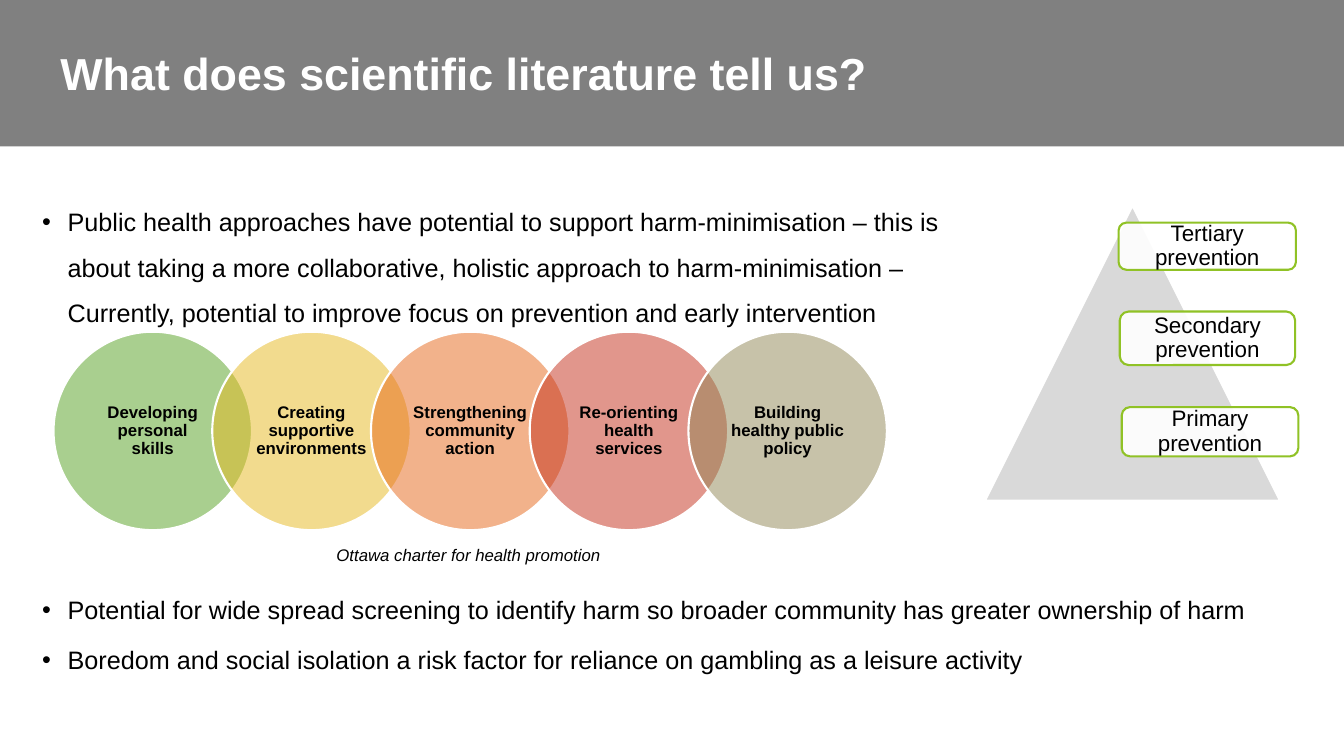
from copy import deepcopy
from dataclasses import dataclass

from lxml.etree import SubElement
from pptx import Presentation
from pptx.dml.color import RGBColor
from pptx.enum.shapes import MSO_SHAPE
from pptx.enum.text import MSO_ANCHOR, MSO_AUTO_SIZE, PP_ALIGN
from pptx.oxml.ns import qn
from pptx.shapes.autoshape import Shape
from pptx.text.text import TextFrame
from pptx.util import Cm, Pt

BLACK = RGBColor(0x00, 0x00, 0x00)
WHITE = RGBColor(0xFF, 0xFF, 0xFF)
BAND_GREY = RGBColor(0x80, 0x80, 0x80)
PYRAMID_GREY = RGBColor(0xD9, 0xD9, 0xD9)
GREEN = RGBColor(0x54, 0xA0, 0x21)
YELLOW = RGBColor(0xE6, 0xB9, 0x1E)
ORANGE = RGBColor(0xE7, 0x66, 0x18)
RED = RGBColor(0xC4, 0x2F, 0x1A)
KHAKI = RGBColor(0x91, 0x86, 0x55)
LIME = RGBColor(0x90, 0xC2, 0x26)

FONT = "Arial"
CIRCLE_LEFT, CIRCLE_TOP, CIRCLE_SIZE, CIRCLE_STEP = 1.35, 8.36, 5, 4


@dataclass(frozen=True)
class CharterAction:
    text: str
    color: RGBColor


@dataclass(frozen=True)
class PreventionLevel:
    text: str
    left: float
    top: float
    width: float
    height: float


@dataclass(frozen=True)
class Finding:
    text: str
    space_before: float


ACTIONS = [
    CharterAction("Developing personal\nskills", GREEN),
    CharterAction("Creating supportive environments", YELLOW),
    CharterAction("Strengthening community action", ORANGE),
    CharterAction("Re-orienting\nhealth services", RED),
    CharterAction("Building healthy public\npolicy", KHAKI),
]

LEVELS = [
    PreventionLevel("Tertiary prevention", 28.19, 5.61, 4.47, 1.19),
    PreventionLevel("Secondary prevention", 28.22, 7.85, 4.42, 1.35),
    PreventionLevel("Primary prevention", 28.27, 10.26, 4.45, 1.24),
]

# The second finding starts below the row of circles.
FINDINGS = [
    Finding(
        "Public health approaches have potential to support harm-minimisation – this is\n"
        "about taking a more collaborative, holistic approach to harm-minimisation –\n"
        "Currently, potential to improve focus on prevention and early intervention",
        3,
    ),
    Finding(
        "Potential for wide spread screening to identify harm so broader community "
        "has greater ownership of harm",
        180,
    ),
    Finding(
        "Boredom and social isolation a risk factor for reliance on gambling "
        "as a leisure activity",
        3,
    ),
]


def write(frame: TextFrame, *texts: str, size: float, color: RGBColor = BLACK,
          bold: bool = False, italic: bool = False,
          align: PP_ALIGN = PP_ALIGN.LEFT, line_spacing: float = 1.0) -> None:
    """Write one formatted paragraph per text; a newline is a line break."""
    for index, text in enumerate(texts):
        paragraph = frame.add_paragraph() if index else frame.paragraphs[0]
        paragraph.text = text
        paragraph.alignment = align
        paragraph.line_spacing = line_spacing
        for run in paragraph.runs:
            run.font.name, run.font.size = FONT, Pt(size)
            run.font.bold, run.font.italic = bold, italic
            run.font.color.rgb = color
        for line_break in paragraph._p.findall(qn("a:br")):
            line_break.append(deepcopy(paragraph.runs[0]._r.rPr))


def place(shape: Shape, left: float, top: float, width: float, height: float) -> None:
    shape.left, shape.top = Cm(left), Cm(top)
    shape.width, shape.height = Cm(width), Cm(height)


def add_figure(shapes, preset: MSO_SHAPE, left: float, top: float, width: float,
               height: float, *, fill: RGBColor, line: RGBColor | None = None,
               opacity: int = 100) -> Shape:
    figure = shapes.add_shape(preset, Cm(left), Cm(top), Cm(width), Cm(height))
    figure.shadow.inherit = False
    figure.fill.solid()
    figure.fill.fore_color.rgb = fill
    if opacity < 100:
        fill_color = figure._element.spPr.find(qn("a:solidFill"))[0]
        SubElement(fill_color, qn("a:alpha"), val=str(opacity * 1000))
    if line is None:
        figure.line.fill.background()
    else:
        figure.line.color.rgb = line
        figure.line.width = Pt(1.5)
    return figure


def label(figure: Shape, text: str, *, size: float, bold: bool,
          margin_x: float, margin_y: float) -> None:
    frame = figure.text_frame
    frame.word_wrap = True
    frame.vertical_anchor = MSO_ANCHOR.MIDDLE
    frame.margin_left = frame.margin_right = Cm(margin_x)
    frame.margin_top = frame.margin_bottom = Cm(margin_y)
    write(frame, text, size=size, bold=bold, align=PP_ALIGN.CENTER, line_spacing=0.9)


def add_heading(slide) -> None:
    band = add_figure(slide.shapes, MSO_SHAPE.RECTANGLE, 0, 0, 33.87, 3.69, fill=BAND_GREY)
    slide.shapes._spTree.insert(2, band._element)
    title = slide.shapes.title
    place(title, 1.27, 1.02, 21.72, 1.63)
    title.text_frame.vertical_anchor = MSO_ANCHOR.TOP
    title.text_frame.auto_size = MSO_AUTO_SIZE.NONE
    write(title.text_frame, "What does scientific literature tell us?",
          size=32, color=WHITE, bold=True)


def add_findings(slide) -> None:
    body = slide.placeholders[1]
    place(body, 0.81, 4.7, 31.14, 14)
    frame = body.text_frame
    frame.auto_size = MSO_AUTO_SIZE.NONE
    write(frame, *(finding.text for finding in FINDINGS), size=18, line_spacing=1.5)
    for paragraph, finding in zip(frame.paragraphs, FINDINGS):
        paragraph.space_before = Pt(finding.space_before)
        properties = paragraph._p.get_or_add_pPr()
        properties.set("marL", str(Cm(0.64)))
        properties.set("indent", str(Cm(-0.64)))


def add_charter(slide) -> None:
    circles = slide.shapes.add_group_shape().shapes
    for index, action in enumerate(ACTIONS):
        circle = add_figure(circles, MSO_SHAPE.OVAL, CIRCLE_LEFT + index * CIRCLE_STEP,
                            CIRCLE_TOP, CIRCLE_SIZE, CIRCLE_SIZE,
                            fill=action.color, line=WHITE, opacity=50)
        label(circle, action.text, size=12, bold=True, margin_x=0.28, margin_y=0.05)
    caption = slide.shapes.add_textbox(Cm(8.23), Cm(13.59), Cm(7.21), Cm(0.76))
    caption.text_frame.word_wrap = False
    write(caption.text_frame, "Ottawa charter for health promotion", size=12, italic=True)


def add_pyramid(slide) -> None:
    pyramid = slide.shapes.add_group_shape().shapes
    add_figure(pyramid, MSO_SHAPE.ISOSCELES_TRIANGLE, 24.82, 5.18, 7.44, 7.44,
               fill=PYRAMID_GREY, line=WHITE)
    for level in LEVELS:
        box = add_figure(pyramid, MSO_SHAPE.ROUNDED_RECTANGLE, level.left, level.top,
                         level.width, level.height, fill=WHITE, line=LIME, opacity=90)
        label(box, level.text, size=16, bold=False, margin_x=0.18, margin_y=0.18)


def main() -> None:
    presentation = Presentation()
    presentation.slide_width, presentation.slide_height = Cm(33.87), Cm(19.05)
    slide = presentation.slides.add_slide(presentation.slide_layouts[1])
    add_heading(slide)
    add_findings(slide)
    add_charter(slide)
    add_pyramid(slide)
    presentation.save("out.pptx")


if __name__ == "__main__":
    main()
